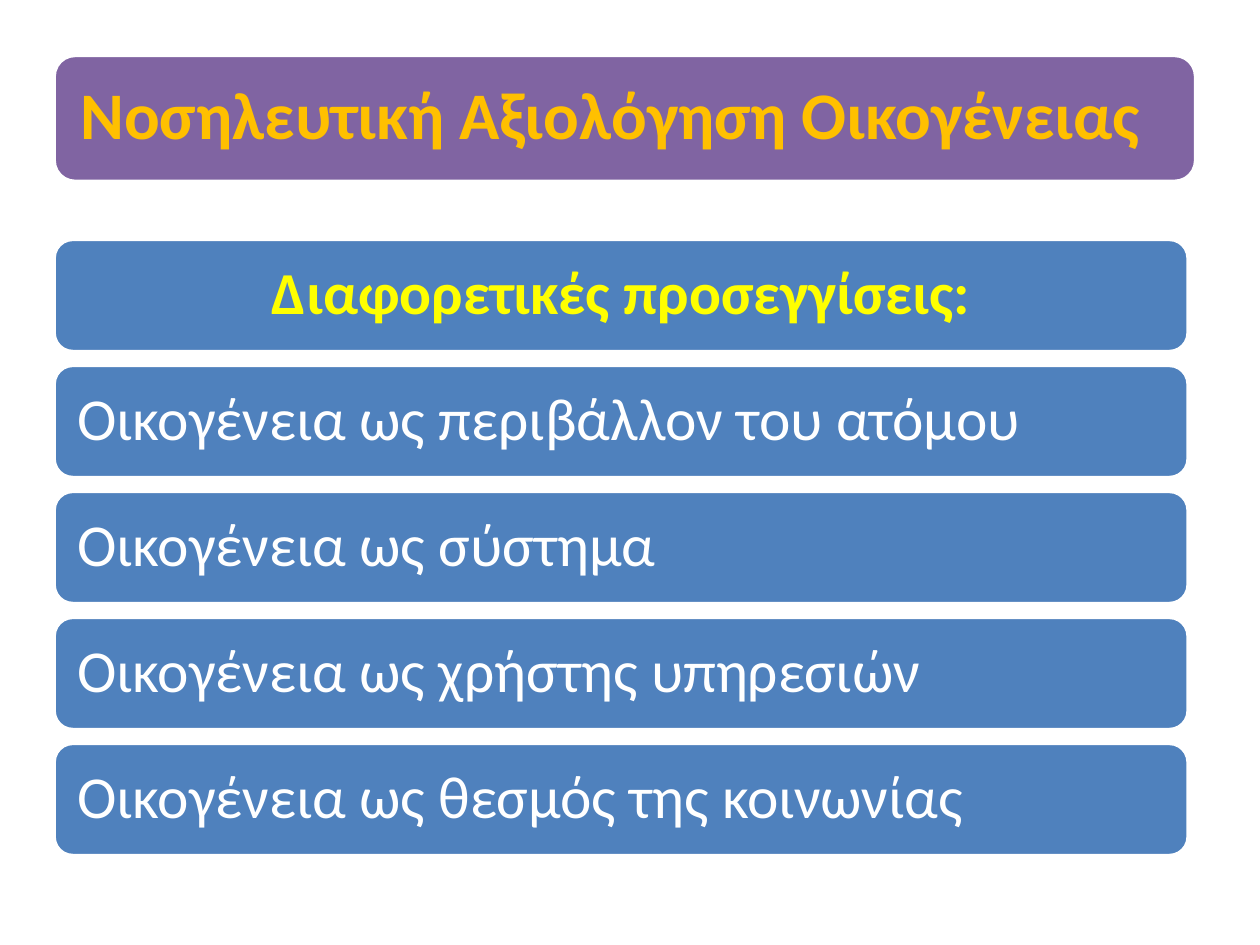
from dataclasses import dataclass

from pptx import Presentation
from pptx.dml.color import RGBColor
from pptx.enum import shapes, text
from pptx.util import Inches, Pt


@dataclass(frozen=True)
class Theme:
    font: str = "Calibri"
    title_size: int = 38
    body_size: int = 34
    purple: str = "8064A2"
    blue: str = "4F81BD"
    gold: str = "FFC000"
    yellow: str = "FFFF00"
    white: str = "FFFFFF"


THEME = Theme()
LEFT = 0.43
TITLE = "Νοσηλευτική Αξιολόγηση Οικογένειας"
HEADING = "Διαφορετικές προσεγγίσεις:"
APPROACHES = [
    "Οικογένεια ως περιβάλλον του ατόμου",
    "Οικογένεια ως σύστημα",
    "Οικογένεια ως χρήστης υπηρεσιών",
    "Οικογένεια ως θεσμός της κοινωνίας",
]


def add_bar(slide, wording, top, width, height, inset, fill, size, color,
            bold=False, align=text.PP_ALIGN.LEFT):
    shape = slide.shapes.add_shape(
        shapes.MSO_SHAPE.ROUNDED_RECTANGLE,
        Inches(LEFT), Inches(top), Inches(width), Inches(height))
    shape.shadow.inherit = False
    shape.fill.solid()
    shape.fill.fore_color.rgb = RGBColor.from_string(fill)
    shape.line.color.rgb = RGBColor.from_string(THEME.white)
    shape.line.width = Pt(2)

    frame = shape.text_frame
    frame.word_wrap = True
    frame.vertical_anchor = text.MSO_ANCHOR.MIDDLE
    frame.margin_left = frame.margin_right = Inches(inset)
    frame.margin_top = frame.margin_bottom = Inches(inset)

    paragraph = frame.paragraphs[0]
    paragraph.text = wording
    paragraph.alignment = align
    paragraph.line_spacing = 0.9
    paragraph.font.name = THEME.font
    paragraph.font.size = Pt(size)
    paragraph.font.bold = bold
    paragraph.font.color.rgb = RGBColor.from_string(color)


def add_title(slide):
    add_bar(slide, TITLE, 0.44, 9.06, 1, 0.16, THEME.purple,
            THEME.title_size, THEME.gold, bold=True)


def add_list_bar(slide, row, wording, color=THEME.white, **style):
    top, pitch = 1.9, 1
    add_bar(slide, wording, top + row * pitch, 9, 0.89, 0.14, THEME.blue,
            THEME.body_size, color, **style)


def main():
    presentation = Presentation()
    presentation.slide_width = Inches(10)
    presentation.slide_height = Inches(7.5)
    slide = presentation.slides.add_slide(presentation.slide_layouts[6])

    add_title(slide)
    add_list_bar(slide, 0, HEADING, THEME.yellow, bold=True,
                 align=text.PP_ALIGN.CENTER)
    for row, approach in enumerate(APPROACHES, start=1):
        add_list_bar(slide, row, approach)

    presentation.save("out.pptx")


if __name__ == "__main__":
    main()
